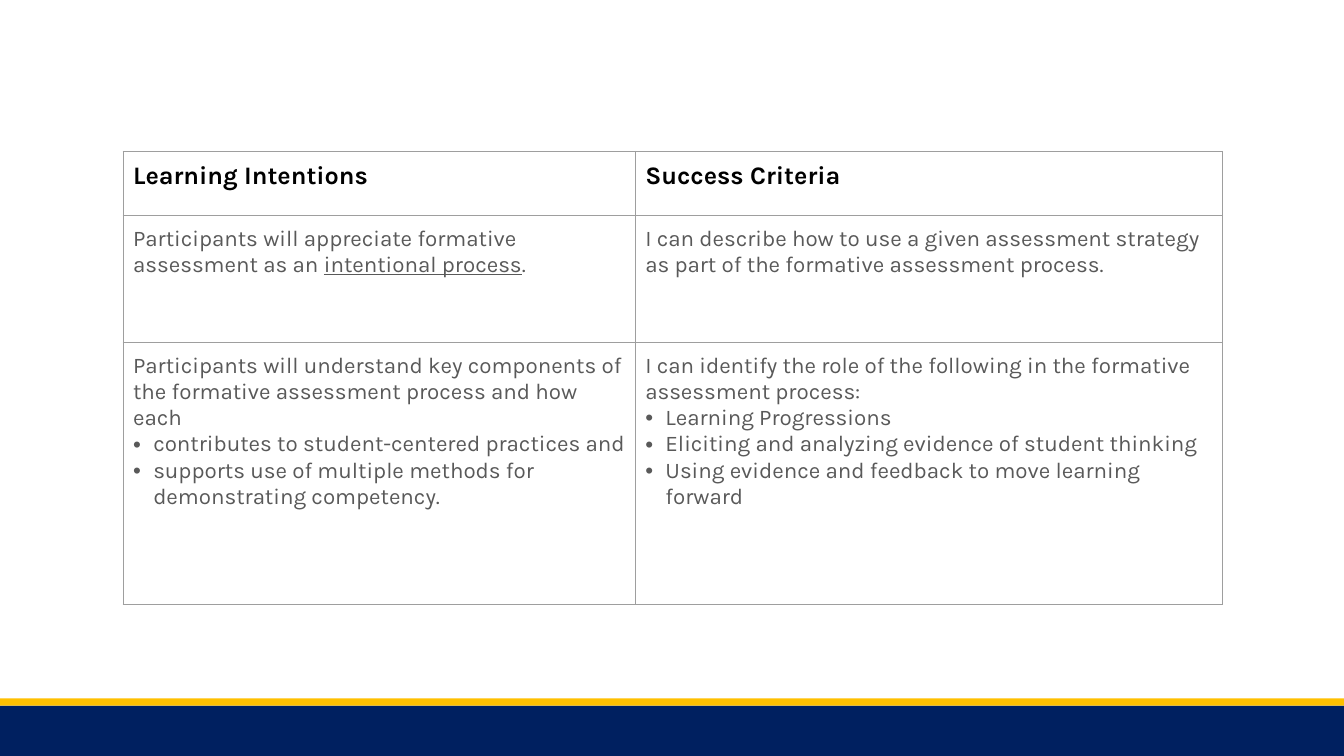
from dataclasses import dataclass

from lxml import etree
from pptx import Presentation
from pptx.dml.color import RGBColor
from pptx.enum.shapes import MSO_SHAPE
from pptx.oxml.ns import qn
from pptx.util import Inches, Pt

RECTANGLE = MSO_SHAPE.RECTANGLE
FONT = "Karla"
BLACK, GRAY, BORDER = "000000", "595959", "9E9E9E"
NAVY, GOLD = "002060", "FFC000"
SLIDE_WIDTH, SLIDE_HEIGHT = 13.33, 7.5
COLUMN_WIDTHS = (5.08, 5.82)
ROW_HEIGHTS = (0.64, 1.26, 2.6)
MARGIN = Inches(0.1)
BULLET_INDENT = Inches(0.2)


@dataclass(frozen=True)
class Band:
    top: float
    height: float
    color: str


@dataclass(frozen=True)
class Run:
    text: str
    underline: bool = False


@dataclass(frozen=True)
class Para:
    runs: tuple[Run, ...]
    bullet: bool = False


def plain(text: str) -> Para:
    return Para((Run(text),))


def bullet(text: str) -> Para:
    return Para((Run(text),), bullet=True)


BANDS = (Band(7, 0.5, NAVY), Band(6.93, 0.07, GOLD))

ROWS = (
    ((plain("Learning Intentions"),), (plain("Success Criteria"),)),
    (
        (
            Para((
                Run("Participants will appreciate formative assessment as an "),
                Run("intentional process", underline=True),
                Run("."),
            )),
        ),
        (
            plain("I can describe how to use a given assessment strategy "
                  "as part of the formative assessment process."),
        ),
    ),
    (
        (
            plain("Participants will understand key components of "
                  "the formative assessment process and how each "),
            bullet("contributes to student-centered practices and "),
            bullet("supports use of multiple methods for demonstrating competency. "),
        ),
        (
            plain("I can identify the role of the following in the formative "
                  "assessment process:"),
            bullet("Learning Progressions"),
            bullet("Eliciting and analyzing evidence of student thinking"),
            bullet("Using evidence and feedback to move learning forward"),
        ),
    ),
)


def rgb(color: str) -> RGBColor:
    return RGBColor.from_string(color)


def add_band(slide, band: Band) -> None:
    sp = slide.shapes.add_shape(
        RECTANGLE, 0, Inches(band.top), Inches(SLIDE_WIDTH), Inches(band.height))
    sp.shadow.inherit = False
    sp.fill.solid()
    sp.fill.fore_color.rgb = rgb(band.color)
    sp.line.fill.background()


def set_borders(cell) -> None:
    tc_pr = cell._tc.get_or_add_tcPr()
    for index, side in enumerate(("a:lnL", "a:lnR", "a:lnT", "a:lnB")):
        ln = etree.Element(qn(side), w=str(Pt(0.75)))
        fill = etree.SubElement(ln, qn("a:solidFill"))
        etree.SubElement(fill, qn("a:srgbClr"), val=BORDER)
        tc_pr.insert(index, ln)


def add_bullet(p) -> None:
    p_pr = p._p.get_or_add_pPr()
    p_pr.set("marL", str(BULLET_INDENT))
    p_pr.set("indent", str(-BULLET_INDENT))
    etree.SubElement(p_pr, qn("a:buFont"), typeface="Arial")
    etree.SubElement(p_pr, qn("a:buChar"), char="•")


def fill_cell(cell, paras: tuple[Para, ...], header: bool) -> None:
    cell.fill.background()
    set_borders(cell)
    cell.margin_left = cell.margin_right = MARGIN
    cell.margin_top = cell.margin_bottom = MARGIN
    tf = cell.text_frame
    for index, para in enumerate(paras):
        p = tf.paragraphs[0] if index == 0 else tf.add_paragraph()
        if para.bullet:
            add_bullet(p)
        for run in para.runs:
            r = p.add_run()
            r.text = run.text
            r.font.name = FONT
            r.font.size = Pt(18 if header else 16)
            r.font.bold = header
            r.font.underline = run.underline
            r.font.color.rgb = rgb(BLACK if header else GRAY)


def add_goals_table(slide) -> None:
    table = slide.shapes.add_table(
        len(ROW_HEIGHTS), len(COLUMN_WIDTHS), Inches(1.22), Inches(1.5),
        Inches(sum(COLUMN_WIDTHS)), Inches(sum(ROW_HEIGHTS))).table
    table.first_row = False
    table.horz_banding = False
    for column, width in zip(table.columns, COLUMN_WIDTHS):
        column.width = Inches(width)
    for row, height in zip(table.rows, ROW_HEIGHTS):
        row.height = Inches(height)
    for row_index, row in enumerate(ROWS):
        for column_index, paras in enumerate(row):
            fill_cell(table.cell(row_index, column_index), paras, row_index == 0)


def main() -> None:
    prs = Presentation()
    prs.slide_width = Inches(SLIDE_WIDTH)
    prs.slide_height = Inches(SLIDE_HEIGHT)
    slide = prs.slides.add_slide(prs.slide_layouts[6])
    for band in BANDS:
        add_band(slide, band)
    add_goals_table(slide)
    prs.save("out.pptx")


if __name__ == "__main__":
    main()
